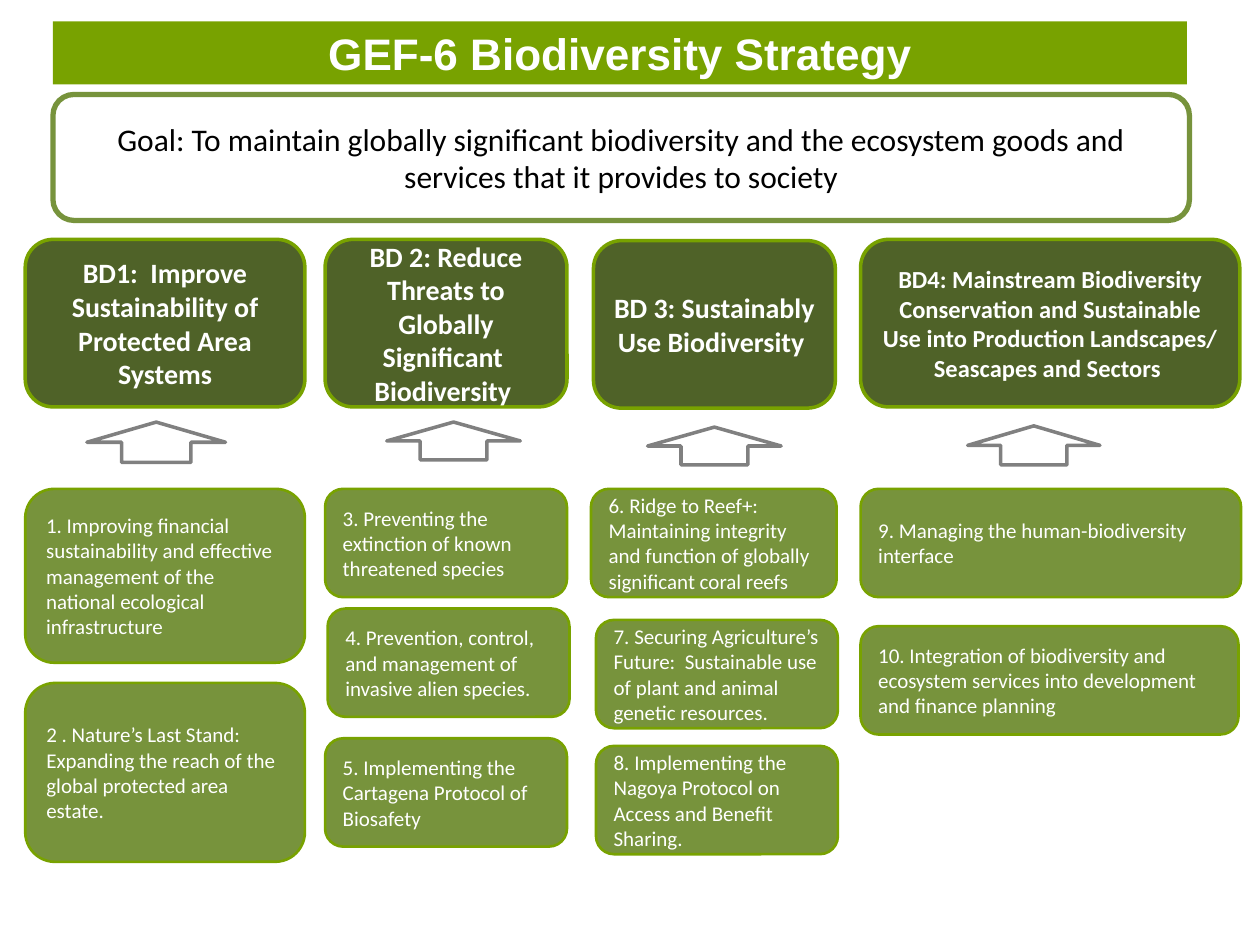
from pptx import Presentation
from pptx.dml.color import RGBColor
from pptx.enum.shapes import MSO_SHAPE
from pptx.enum.text import MSO_ANCHOR, PP_ALIGN
from pptx.util import Inches, Pt

RECT, ROUNDED, UP_ARROW = (MSO_SHAPE.RECTANGLE, MSO_SHAPE.ROUNDED_RECTANGLE,
                           MSO_SHAPE.UP_ARROW)
LEFT, CENTER, MIDDLE = PP_ALIGN.LEFT, PP_ALIGN.CENTER, MSO_ANCHOR.MIDDLE

WHITE = RGBColor(0xFF, 0xFF, 0xFF)
BLACK = RGBColor(0x00, 0x00, 0x00)
GRAY = RGBColor(0x80, 0x80, 0x80)
LIME = RGBColor(0x78, 0xA2, 0x00)
OLIVE = RGBColor(0x77, 0x93, 0x3C)
DARK_OLIVE = RGBColor(0x4F, 0x62, 0x28)

TITLE_FONT = {"name": "Arial", "size": Pt(25.2), "bold": True}
GOAL_FONT = {"name": "Calibri", "size": Pt(18)}
HEADING_FONT = {"name": "Calibri", "size": Pt(16), "bold": True}
LONG_HEADING_FONT = {**HEADING_FONT, "size": Pt(14)}
PROGRAM_FONT = {"name": "Calibri", "size": Pt(12)}

HEADING_HEIGHT = 1.33
PROGRAM_HEIGHT = 0.86

# Boxes are (left, top, width, height) in inches. Each program is
# (left, top, width, height, text).
OBJECTIVES = [
    {"heading": "BD1:  Improve Sustainability of Protected Area Systems",
     "font": HEADING_FONT, "corner": (0.2, 1.9), "width": 2.22,
     "arrow": (0.69, 3.35, 1.1, 0.32),
     "programs": [
         (0.2, 3.88, 2.22, 1.38, "1. Improving financial sustainability and effective "
          "management of the national ecological infrastructure"),
         (0.2, 5.42, 2.22, 1.42, "2 . Nature’s Last Stand: Expanding the reach of the "
          "global protected area estate.")]},
    {"heading": "BD 2: Reduce Threats to Globally Significant  Biodiversity ",
     "font": HEADING_FONT, "corner": (2.58, 1.9), "width": 1.92,
     "arrow": (3.07, 3.35, 1.06, 0.3),
     "programs": [
         (2.58, 3.88, 1.92, PROGRAM_HEIGHT,
          "3. Preventing the extinction of known threatened species"),
         (2.6, 4.83, 1.92, PROGRAM_HEIGHT,
          "4. Prevention, control, and management of invasive alien species."),
         (2.58, 5.86, 1.92, PROGRAM_HEIGHT,
          "5. Implementing the Cartagena Protocol of Biosafety")]},
    {"heading": "BD 3: Sustainably Use Biodiversity ",
     "font": HEADING_FONT, "corner": (4.71, 1.91), "width": 1.92,
     "arrow": (5.14, 3.39, 1.06, 0.3),
     "programs": [
         (4.69, 3.88, 1.95, PROGRAM_HEIGHT, "6. Ridge to Reef+: Maintaining integrity "
          "and function of globally significant coral reefs"),
         (4.73, 4.92, 1.92, PROGRAM_HEIGHT, "7. Securing Agriculture’s Future:  "
          "Sustainable use of plant and animal genetic resources."),
         (4.73, 5.92, 1.92, PROGRAM_HEIGHT, "8. Implementing the Nagoya Protocol on "
          "Access and Benefit Sharing.")]},
    {"heading": "BD4: Mainstream Biodiversity Conservation and Sustainable Use into "
                "Production Landscapes/ Seascapes and Sectors ",
     "font": LONG_HEADING_FONT, "corner": (6.83, 1.9), "width": 3.01,
     "arrow": (7.68, 3.38, 1.05, 0.31),
     "programs": [
         (6.83, 3.88, 3.02, PROGRAM_HEIGHT,
          "9. Managing the human-biodiversity interface"),
         (6.83, 4.97, 3, PROGRAM_HEIGHT, "10. Integration of biodiversity and ecosystem "
          "services into development and finance planning")]},
]


def add_block(slide, preset, box, fill, line=None, line_width=0):
    block = slide.shapes.add_shape(preset, *map(Inches, box))
    block.shadow.inherit = False
    block.fill.solid()
    block.fill.fore_color.rgb = fill
    if line is None:
        block.line.fill.background()
    else:
        block.line.color.rgb = line
        block.line.width = Pt(line_width)
    return block


def write(block, text, font_format, color=WHITE, align=CENTER):
    frame = block.text_frame
    frame.word_wrap = True
    frame.vertical_anchor = MIDDLE
    paragraph = frame.paragraphs[0]
    paragraph.alignment = align
    run = paragraph.add_run()
    run.text = text
    run.font.color.rgb = color
    for attribute, value in font_format.items():
        setattr(run.font, attribute, value)


def add_title(slide, box):
    banner = add_block(slide, RECT, box, LIME)
    write(banner, "GEF-6 Biodiversity Strategy", TITLE_FONT)


def add_goal(slide, box):
    goal = add_block(slide, ROUNDED, box, WHITE, OLIVE, 3)
    write(goal, "Goal: To maintain globally significant biodiversity and the ecosystem "
          "goods and services that it provides to society", GOAL_FONT, BLACK)


def add_objective(slide, box, objective):
    # Objective heading
    heading = add_block(slide, ROUNDED, box, DARK_OLIVE, LIME, 2)
    write(heading, objective["heading"], objective["font"])
    # Arrow from the programs up to the objective
    add_block(slide, UP_ARROW, objective["arrow"], WHITE, GRAY, 2)
    # Programs
    for *program_box, text in objective["programs"]:
        program = add_block(slide, ROUNDED, program_box, OLIVE, LIME, 1.5)
        write(program, text, PROGRAM_FONT, align=LEFT)


def main():
    deck = Presentation()
    deck.slide_width, deck.slide_height = Inches(10), Inches(7.5)
    slide = deck.slides.add_slide(deck.slide_layouts[6])
    add_title(slide, (0.42, 0.17, 9, 0.5))
    add_goal(slide, (0.42, 0.75, 9.02, 1))
    for objective in OBJECTIVES:
        box = (*objective["corner"], objective["width"], HEADING_HEIGHT)
        add_objective(slide, box, objective)
    deck.save("out.pptx")


if __name__ == "__main__":
    main()
